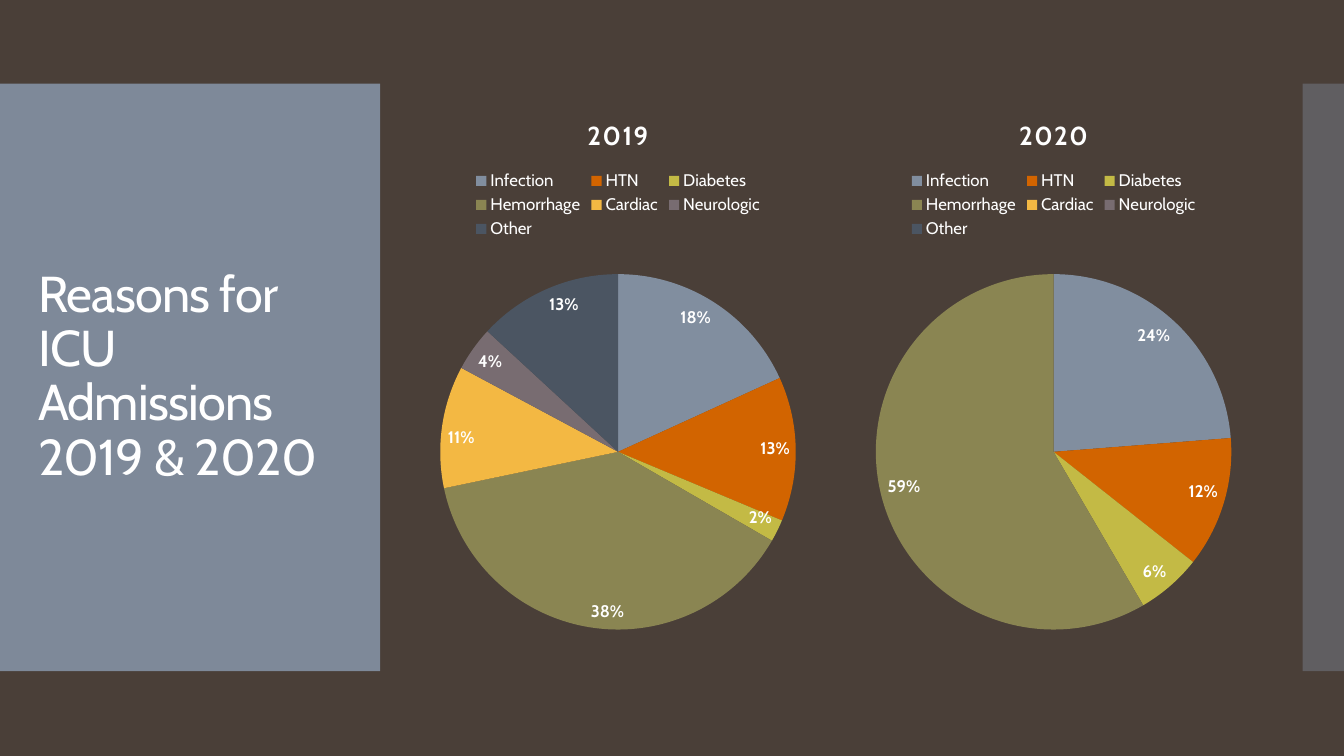
from lxml.etree import SubElement
from pptx import Presentation
from pptx.chart.data import CategoryChartData
from pptx.dml.color import RGBColor
from pptx.enum.chart import XL_CHART_TYPE, XL_LABEL_POSITION, XL_LEGEND_POSITION
from pptx.enum.shapes import MSO_SHAPE
from pptx.enum.text import MSO_ANCHOR
from pptx.oxml import parse_xml
from pptx.oxml.ns import nsdecls, qn
from pptx.util import Inches, Pt

FONT = "Cabin"
WHITE = "FFFFFF"
BACKGROUND = "4A3F38"
SLATE = "818E9F"
SLICE_COLORS = {
    "Infection": SLATE,
    "HTN": "D26400",
    "Diabetes": "C3BA45",
    "Hemorrhage": "8A8552",
    "Cardiac": "F3B843",
    "Neurologic": "786C71",
    "Other": "4B5562",
}
ADMISSIONS = {
    "2019": (18, 13, 2, 38, 11, 4, 13),
    "2020": (24, 12, 6, 59, 0, 0, 0),
}
PANEL_TOP, PANEL_HEIGHT = 0.83, 5.83
CHART_LEFT, CHART_STEP = 4.23, 4.32
PIE_AREA = {"x": 0.036, "y": 0.316, "w": 0.928, "h": 0.63}


def color(value):
    """Turn a hex string into a color."""
    return RGBColor.from_string(value)


def style_font(font, size, bold=False):
    """Apply the white slide font at a given size."""
    font.name = FONT
    font.size = Pt(size)
    font.bold = bold
    font.color.rgb = color(WHITE)


def add_panel(page, left, width, opacity):
    """Add a translucent slate band with a given opacity percentage."""
    panel = page.shapes.add_shape(
        MSO_SHAPE.RECTANGLE, Inches(left), Inches(PANEL_TOP), Inches(width), Inches(PANEL_HEIGHT)
    )
    panel.shadow.inherit = False
    panel.line.fill.background()
    panel.fill.solid()
    panel.fill.fore_color.rgb = color(SLATE)
    fill_color = panel.fill._xPr.find(f".//{qn('a:srgbClr')}")
    SubElement(fill_color, qn("a:alpha")).set("val", str(opacity * 1000))


def add_heading(page, text):
    """Add the slide heading, centred vertically on the left panel."""
    box = page.shapes.add_textbox(Inches(0.28), Inches(1.23), Inches(3.22), Inches(5.03))
    frame = box.text_frame
    frame.word_wrap = True
    frame.vertical_anchor = MSO_ANCHOR.MIDDLE
    para = frame.paragraphs[0]
    para.text = text
    para.line_spacing = 0.9
    style_font(para.font, 36)
    for span in para.runs:
        span._r.get_or_add_rPr().set("spc", "-60")


def place_pie(chart):
    """Fix the pie's position as shares of the chart area."""
    plot_area = chart._chartSpace.chart.plotArea
    for layout in plot_area.findall(qn("c:layout")):
        plot_area.remove(layout)
    shares = "".join(f'<c:{key} val="{share}"/>' for key, share in PIE_AREA.items())
    plot_area.insert(0, parse_xml(
        f'<c:layout {nsdecls("c")}><c:manualLayout><c:layoutTarget val="inner"/>'
        f'<c:xMode val="edge"/><c:yMode val="edge"/>{shares}</c:manualLayout></c:layout>'
    ))


def add_pie(page, left, year, percentages):
    """Add one year's pie chart with its title, legend and labels."""
    data = CategoryChartData()
    data.categories = list(SLICE_COLORS)
    data.add_series(year, percentages)
    chart = page.shapes.add_chart(
        XL_CHART_TYPE.PIE, Inches(left), Inches(0.95), Inches(3.8), Inches(5.6), data
    ).chart
    style_font(chart.font, 10)

    chart.has_title = True
    title = chart.chart_title.text_frame.paragraphs[0]
    title.text = year
    style_font(title.font, 18.6, bold=True)
    title.runs[0]._r.get_or_add_rPr().set("spc", "100")
    chart.chart_title.include_in_layout = False

    chart.has_legend = True
    chart.legend.position = XL_LEGEND_POSITION.TOP
    chart.legend.include_in_layout = False
    style_font(chart.legend.font, 12)

    plot = chart.plots[0]
    plot.vary_by_categories = True
    for index, slice_color in enumerate(SLICE_COLORS.values()):
        fill = plot.series[0].points[index].format.fill
        fill.solid()
        fill.fore_color.rgb = color(slice_color)

    labels = plot.series[0].data_labels
    labels.show_value = True
    labels.number_format = '0"%";;;'
    labels.number_format_is_linked = False
    labels.position = XL_LABEL_POSITION.INSIDE_END
    style_font(labels.font, 12, bold=True)
    place_pie(chart)


def main():
    """Build and save the slide."""
    deck = Presentation()
    deck.slide_width, deck.slide_height = Inches(13.33), Inches(7.5)
    page = deck.slides.add_slide(deck.slide_layouts[6])
    page.background.fill.solid()
    page.background.fill.fore_color.rgb = color(BACKGROUND)

    add_panel(page, 0, 3.77, 95)
    add_panel(page, 12.92, 0.41, 40)
    add_heading(page, "Reasons for ICU Admissions \v2019 & 2020")
    for column, (year, percentages) in enumerate(ADMISSIONS.items()):
        add_pie(page, CHART_LEFT + column * CHART_STEP, year, percentages)

    deck.save("out.pptx")


if __name__ == "__main__":
    main()
